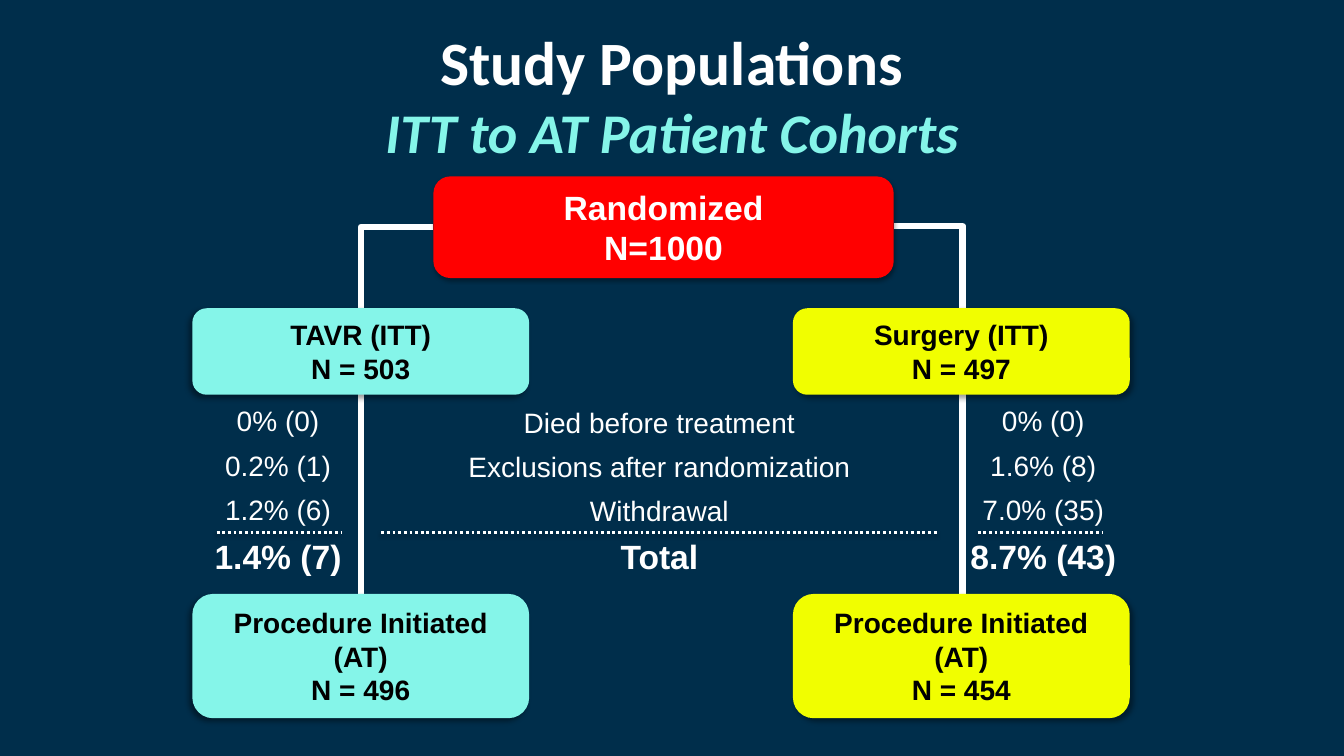
"""Build the study population flow slide."""
from lxml.etree import SubElement
from pptx import Presentation
from pptx.dml.color import RGBColor
from pptx.enum.dml import MSO_LINE
from pptx.enum.shapes import MSO_CONNECTOR, MSO_SHAPE
from pptx.enum.text import MSO_ANCHOR, MSO_AUTO_SIZE, PP_ALIGN
from pptx.oxml.ns import qn
from pptx.util import Inches, Pt

COLORS = {
    "navy": "002E4B", "white": "FFFFFF", "black": "000000",
    "red": "FF0000", "aqua": "85F5E9", "yellow": "F1FE00",
}
COLUMNS, ROWS = 160, 90
NO_GRID_STYLE = "{2D5ABB26-0587-4C30-8999-92F81FD0307C}"
BODY = {"name": "Arial", "size": Pt(20), "bold": False}
BOX = {**BODY, "bold": True}
LARGE = {**BOX, "size": Pt(24)}
HEADING = {"name": "Calibri", "size": Pt(44), "bold": True}
SUBHEADING = {**HEADING, "size": Pt(40), "italic": True}


class FlowSlide:
    """Hold the style and the slide, and draw elements on a grid."""

    def __init__(self, presentation):
        self.slide = presentation.slides.add_slide(presentation.slide_layouts[5])
        self.column = presentation.slide_width / COLUMNS
        self.row = presentation.slide_height / ROWS
        background = self.slide.background.fill
        background.solid()
        background.fore_color.rgb = self.color("navy")

    def color(self, name):
        return RGBColor.from_string(COLORS[name])

    def place(self, x, y):
        return round(x * self.column), round(y * self.row)

    def add_text(self, paragraph, text, style, color):
        paragraph.alignment = PP_ALIGN.CENTER
        run = paragraph.add_run()
        run.text = text
        for name, value in style.items():
            setattr(run.font, name, value)
        run.font.color.rgb = self.color(color)

    def shadow(self, shape, alpha, blur, distance, angle):
        effects = SubElement(shape._element.spPr, qn("a:effectLst"))
        outer = SubElement(effects, qn("a:outerShdw"), {
            "blurRad": str(Pt(blur)), "dist": str(Pt(distance)),
            "dir": str(angle * 60000), "algn": "ctr", "rotWithShape": "0"})
        black = SubElement(outer, qn("a:srgbClr"), val=COLORS["black"])
        SubElement(black, qn("a:alpha"), val=str(alpha * 1000))

    def title(self, x, y, width, height, heading, subheading):
        shape = self.slide.shapes.title
        shape.left, shape.top = self.place(x, y)
        shape.width, shape.height = self.place(width, height)
        frame = shape.text_frame
        settings = {"margin_left": Inches(0.05), "margin_right": Inches(0.05),
                    "margin_top": Inches(0.05), "margin_bottom": Inches(0.05),
                    "vertical_anchor": MSO_ANCHOR.TOP, "word_wrap": True,
                    "auto_size": MSO_AUTO_SIZE.NONE}
        for name, value in settings.items():
            setattr(frame, name, value)
        paragraph = frame.paragraphs[0]
        paragraph.line_spacing = 1.0
        self.add_text(paragraph, heading, HEADING, "white")
        paragraph.add_line_break()
        self.add_text(paragraph, subheading, SUBHEADING, "aqua")

    def box(self, x, y, width, height, lines, fill, style, ink, shadow):
        shape = self.slide.shapes.add_shape(
            MSO_SHAPE.ROUNDED_RECTANGLE, *self.place(x, y), *self.place(width, height))
        shape.fill.solid()
        shape.fill.fore_color.rgb = self.color(fill)
        shape.line.fill.background()
        self.shadow(shape, *shadow)
        frame = shape.text_frame
        frame.word_wrap = True
        frame.vertical_anchor = MSO_ANCHOR.MIDDLE
        for index, line in enumerate(lines):
            paragraph = frame.add_paragraph() if index else frame.paragraphs[0]
            self.add_text(paragraph, line, style, ink)

    def line(self, kind, start, end, width):
        connector = self.slide.shapes.add_connector(
            kind, *self.place(*start), *self.place(*end))
        connector.line.color.rgb = self.color("white")
        connector.line.width = Pt(width)
        return connector

    def branch(self, start, end):
        connector = self.line(MSO_CONNECTOR.ELBOW, start, end, 4.5)
        properties = connector._element.spPr
        properties.find(qn("a:prstGeom")).set("prst", "bentConnector2")
        SubElement(properties.find(qn("a:ln")), qn("a:tailEnd"), type="triangle")
        SubElement(properties, qn("a:effectLst"))

    def rule(self, start, end):
        connector = self.line(MSO_CONNECTOR.STRAIGHT, start, end, 2)
        connector.line.dash_style = MSO_LINE.ROUND_DOT
        self.shadow(connector, 38, 3.1, 1.6, 90)

    def table(self, x, y, width, values, anchor):
        heights = [5.25] * (len(values) - 1) + [5.8]
        shape = self.slide.shapes.add_table(
            len(values), 1, *self.place(x, y), *self.place(width, sum(heights)))
        table = shape.table
        table.first_row = table.horz_banding = False
        table._tbl.tblPr.find(qn("a:tableStyleId")).text = NO_GRID_STYLE
        for index, (value, height) in enumerate(zip(values, heights)):
            table.rows[index].height = round(height * self.row)
            cell = table.cell(index, 0)
            cell.fill.background()
            cell.vertical_anchor = anchor
            style = LARGE if index == len(values) - 1 else BODY
            self.add_text(cell.text_frame.paragraphs[0], value, style, "white")


def main():
    presentation = Presentation()
    presentation.slide_width, presentation.slide_height = Inches(13.33), Inches(7.5)
    flow = FlowSlide(presentation)
    flow.title(12, 2.2, 136, 10, "Study Populations", "ITT to AT Patient Cohorts")

    for start, end in [((51.6, 27), (43, 75.4)), ((106.4, 26.9), (114.6, 75.4))]:
        flow.branch(start, end)
    flow.box(51.6, 21, 54.8, 12.1, ["Randomized", "N=1000"],
             "red", LARGE, "white", (35, 3.1, 1.8, 90))
    arms = [
        (22.9, "aqua", 135, "TAVR (ITT)", "N = 503", "N = 496"),
        (94.4, "yellow", 45, "Surgery (ITT)", "N = 497", "N = 454"),
    ]
    for x, fill, angle, arm, assigned, treated in arms:
        shadow = (40, 4, 3, angle)
        flow.box(x, 36.7, 40.1, 10.3, [arm, assigned], fill, BOX, "black", shadow)
        flow.box(x, 70.7, 40.1, 14.8, ["Procedure Initiated (AT)", treated],
                 fill, BOX, "black", shadow)

    reasons = ["Died before treatment", "Exclusions after randomization",
               "Withdrawal", "Total"]
    tables = [
        (42.8, 71.4, reasons, MSO_ANCHOR.MIDDLE),
        (22.8, 20.6, ["0% (0)", "0.2% (1)", "1.2% (6)", "1.4% (7)"], MSO_ANCHOR.TOP),
        (114.2, 20, ["0% (0)", "1.6% (8)", "7.0% (35)", "8.7% (43)"], MSO_ANCHOR.TOP),
    ]
    for x, width, values, anchor in tables:
        flow.table(x, 47.8, width, values, anchor)
    for left, right in [(25.8, 40.6), (116.4, 131.2), (45.4, 111.8)]:
        flow.rule((left, 63.4), (right, 63.4))
    presentation.save("out.pptx")


if __name__ == "__main__":
    main()
